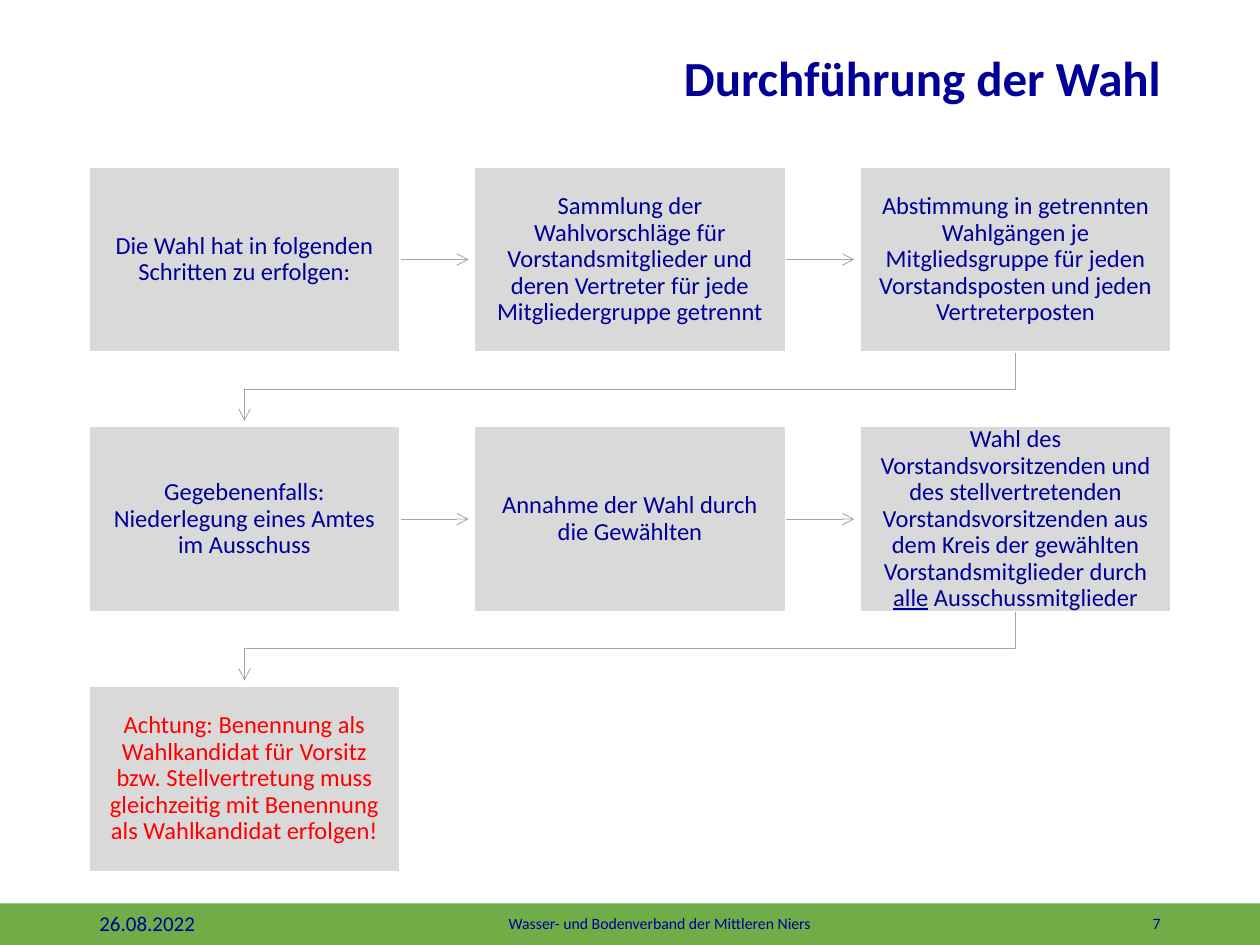
from dataclasses import dataclass

import pptx
import pptx.dml.color
import pptx.enum.shapes
import pptx.enum.text
import pptx.oxml.ns
import pptx.util
from lxml import etree

Inches = pptx.util.Inches
Pt = pptx.util.Pt
Align = pptx.enum.text.PP_ALIGN


@dataclass(frozen=True)
class Theme:
    font: str = "Calibri"
    text: str = "000099"
    warning: str = "FF0000"
    footer_bar: str = "70AD47"
    step_fill: str = "D9D9D9"
    step_line: str = "FFFFFF"
    arrow: str = "A5A5A5"
    title_size: int = 28
    step_size: int = 14
    date_size: int = 12
    footer_size: int = 9


THEME = Theme()

COLUMNS = 3
STEP_LEFT, STEP_TOP = 0.7, 1.32
STEP_WIDTH, STEP_HEIGHT = 2.48, 1.48
COLUMN_PITCH, ROW_PITCH = 3.06, 2.06
ARROW_LENGTH = 0.54
TURN_DROP = 0.29

# Each step is a list of (wording, underlined) spans.
STEPS = [
    [("Die Wahl hat in folgenden Schritten zu erfolgen:", False)],
    [("Sammlung der Wahlvorschläge für Vorstandsmitglieder und deren "
      "Vertreter für jede Mitgliedergruppe getrennt", False)],
    [("Abstimmung in getrennten Wahlgängen je Mitgliedsgruppe für jeden "
      "Vorstandsposten und jeden Vertreterposten", False)],
    [("Gegebenenfalls: Niederlegung eines Amtes im Ausschuss", False)],
    [("Annahme der Wahl durch die Gewählten", False)],
    [("Wahl des Vorstandsvorsitzenden und des stellvertretenden "
      "Vorstandsvorsitzenden aus dem Kreis der gewählten "
      "Vorstandsmitglieder durch ", False),
     ("alle", True),
     (" Ausschussmitglieder", False)],
    [("Achtung: Benennung als Wahlkandidat für Vorsitz bzw. Stellvertretung "
      "muss gleichzeitig mit Benennung als Wahlkandidat erfolgen!", False)],
]


def rgb(value):
    return pptx.dml.color.RGBColor.from_string(value)


def write_text(box, spans, size, color=THEME.text, align=Align.LEFT, bold=False):
    frame = box.text_frame
    frame.word_wrap = True
    frame.vertical_anchor = pptx.enum.text.MSO_ANCHOR.MIDDLE
    para = frame.paragraphs[0]
    para.alignment = align
    para.line_spacing = 0.9
    for wording, underlined in spans:
        span = para.add_run()
        span.text = wording
        span.font.name = THEME.font
        span.font.size = Pt(size)
        span.font.bold = bold
        span.font.underline = underlined
        span.font.color.rgb = rgb(color)


def add_label(page, left, top, width, height, wording, size, **style):
    box = page.shapes.add_textbox(
        Inches(left), Inches(top), Inches(width), Inches(height))
    write_text(box, [(wording, False)], size, **style)


def add_rectangle(page, left, top, width, height, fill):
    box = page.shapes.add_shape(
        pptx.enum.shapes.MSO_SHAPE.RECTANGLE,
        Inches(left), Inches(top), Inches(width), Inches(height))
    box.shadow.inherit = False
    box.fill.solid()
    box.fill.fore_color.rgb = rgb(fill)
    box.line.fill.background()
    return box


def step_position(index):
    row, column = divmod(index, COLUMNS)
    return STEP_LEFT + column * COLUMN_PITCH, STEP_TOP + row * ROW_PITCH


def add_step(page, index, spans):
    left, top = step_position(index)
    box = add_rectangle(page, left, top, STEP_WIDTH, STEP_HEIGHT, THEME.step_fill)
    box.line.color.rgb = rgb(THEME.step_line)
    box.line.width = Pt(1.5)
    frame = box.text_frame
    frame.margin_left = frame.margin_right = Inches(0.12)
    frame.margin_top = frame.margin_bottom = Inches(0.13)
    color = THEME.warning if index == len(STEPS) - 1 else THEME.text
    write_text(box, spans, THEME.step_size, color, Align.CENTER)
    return box


def style_arrow(arrow):
    arrow.line.color.rgb = rgb(THEME.arrow)
    arrow.line.width = Pt(0.5)
    line = arrow.line._get_or_add_ln()
    etree.SubElement(line, pptx.oxml.ns.qn("a:tailEnd"), type="arrow")


def add_straight_arrow(page, index, box):
    """Point from a step towards its right-hand neighbour."""
    left, top = step_position(index)
    start, middle = left + STEP_WIDTH, top + STEP_HEIGHT / 2
    arrow = page.shapes.add_connector(
        pptx.enum.shapes.MSO_CONNECTOR.STRAIGHT,
        Inches(start), Inches(middle), Inches(start + ARROW_LENGTH), Inches(middle))
    arrow.begin_connect(box, 3)
    style_arrow(arrow)
    etree.SubElement(arrow._element.spPr, pptx.oxml.ns.qn("a:effectLst"))


def add_turning_arrow(page, index):
    """Lead from the last step of a row to the first step of the next row."""
    left, top = step_position(index)
    start_x, start_y = left + STEP_WIDTH / 2, top + STEP_HEIGHT
    end_x, end_y = STEP_LEFT + STEP_WIDTH / 2, start_y + ARROW_LENGTH
    turn_y = start_y + TURN_DROP
    builder = page.shapes.build_freeform(Inches(start_x), Inches(start_y))
    corners = [(start_x, turn_y), (end_x, turn_y), (end_x, end_y)]
    builder.add_line_segments(
        [(Inches(x), Inches(y)) for x, y in corners], close=False)
    arrow = builder.convert_to_shape()
    arrow.fill.background()
    style_arrow(arrow)
    arrow.shadow.inherit = False


def add_flow(page):
    boxes = [add_step(page, index, spans) for index, spans in enumerate(STEPS)]
    for index, box in enumerate(boxes[:-1]):
        if (index + 1) % COLUMNS:
            add_straight_arrow(page, index, box)
        else:
            add_turning_arrow(page, index)


def add_footer(page):
    add_rectangle(page, 0, 7.17, 10, 0.33, THEME.footer_bar)
    add_label(page, 0.69, 7.22, 1.08, 0.24, "26.08.2022", THEME.date_size)
    add_label(page, 1.85, 7.22, 6.77, 0.24,
              "Wasser- und Bodenverband der Mittleren Niers",
              THEME.footer_size, align=Align.CENTER)
    add_label(page, 8.7, 7.22, 0.61, 0.24, "7", THEME.footer_size, align=Align.RIGHT)


def main():
    deck = pptx.Presentation()
    deck.slide_width, deck.slide_height = Inches(10), Inches(7.5)
    page = deck.slides.add_slide(deck.slide_layouts[6])
    add_footer(page)
    add_label(page, 1.77, 0.21, 7.54, 0.86, "Durchführung der Wahl",
              THEME.title_size, align=Align.RIGHT, bold=True)
    add_flow(page)
    deck.save("out.pptx")


if __name__ == "__main__":
    main()
